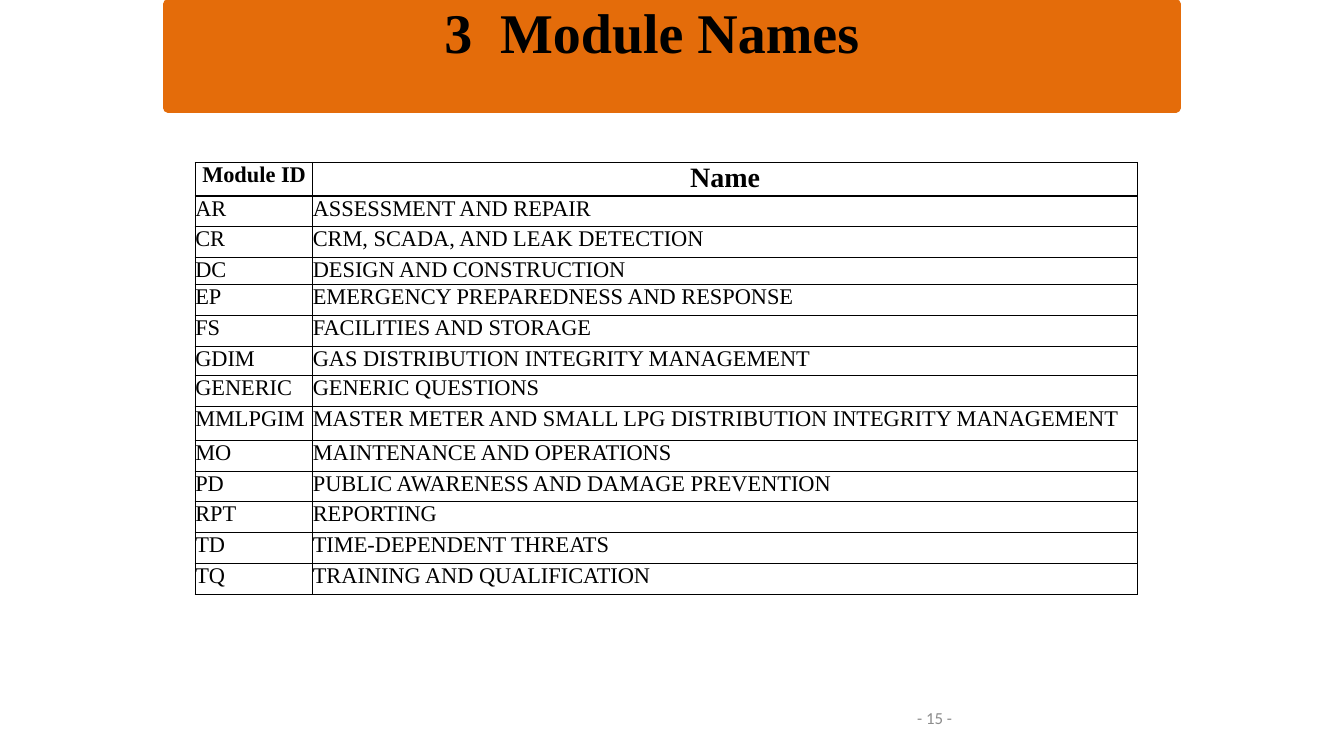
from dataclasses import dataclass

from lxml.etree import SubElement
from pptx import Presentation
from pptx.dml.color import RGBColor
from pptx.enum.shapes import MSO_SHAPE
from pptx.enum.text import MSO_ANCHOR, PP_ALIGN
from pptx.oxml.ns import qn
from pptx.util import Pt


@dataclass(frozen=True)
class Theme:
    orange: str = "E46C0A"
    black: str = "000000"
    grey: str = "8C8C8C"
    serif: str = "Times New Roman"
    sans: str = "Calibri"
    title: int = 40
    heading: int = 20
    body: int = 16
    footer: int = 12
    border: int = 1


MODULES = [
    ("AR", "ASSESSMENT AND REPAIR"),
    ("CR", "CRM, SCADA, AND LEAK DETECTION"),
    ("DC", "DESIGN AND CONSTRUCTION"),
    ("EP", "EMERGENCY PREPAREDNESS AND RESPONSE"),
    ("FS", "FACILITIES AND STORAGE"),
    ("GDIM", "GAS DISTRIBUTION INTEGRITY MANAGEMENT"),
    ("GENERIC", "GENERIC QUESTIONS"),
    ("MMLPGIM", "MASTER METER AND SMALL LPG DISTRIBUTION INTEGRITY MANAGEMENT"),
    ("MO", "MAINTENANCE AND OPERATIONS"),
    ("PD", "PUBLIC AWARENESS AND DAMAGE PREVENTION"),
    ("RPT", "REPORTING"),
    ("TD", "TIME-DEPENDENT THREATS"),
    ("TQ", "TRAINING AND QUALIFICATION"),
]
ROW_HEIGHT = 22
ROW_HEIGHTS = {"Module ID": 23.8, "DC": 18.4, "GDIM": 21, "MMLPGIM": 24.3}


class SlideBuilder:
    """Draws styled elements on the current slide."""

    def __init__(self, s, theme):
        self.s = s
        self.theme = theme

    def style_text(self, tf, text, size, font, color, bold=False, align=PP_ALIGN.LEFT):
        tf.text = text
        p = tf.paragraphs[0]
        p.alignment = align
        for r in p.runs:
            r.font.size = Pt(size)
            r.font.name = font
            r.font.bold = bold
            r.font.color.rgb = RGBColor.from_string(color)

    def banner(self, x, y, w, h, color, line_width):
        sp = self.s.shapes.add_shape(MSO_SHAPE.RECTANGLE, Pt(x), Pt(y), Pt(w), Pt(h))
        sp.shadow.inherit = False
        sp.fill.solid()
        sp.fill.fore_color.rgb = RGBColor.from_string(color)
        sp.line.color.rgb = RGBColor.from_string(color)
        sp.line.width = Pt(line_width)

    def text(self, x, y, w, h, text, size, font, color, anchor=MSO_ANCHOR.TOP,
             top=3.6, right=7.2, **style):
        tf = self.s.shapes.add_textbox(Pt(x), Pt(y), Pt(w), Pt(h)).text_frame
        tf.word_wrap = True
        tf.vertical_anchor = anchor
        tf.margin_top, tf.margin_right = Pt(top), Pt(right)
        self.style_text(tf, text, size, font, color, **style)

    def borders(self, cell):
        tcPr = cell._tc.get_or_add_tcPr()
        for side in ("a:lnL", "a:lnR", "a:lnT", "a:lnB"):
            ln = SubElement(tcPr, qn(side), w=str(Pt(self.theme.border)))
            fill = SubElement(ln, qn("a:solidFill"))
            SubElement(fill, qn("a:srgbClr"), val=self.theme.black)

    def cell(self, cell, text, size, **style):
        cell.margin_left = cell.margin_right = cell.margin_top = cell.margin_bottom = 0
        self.borders(cell)
        cell.fill.background()
        self.style_text(cell.text_frame, text, size, self.theme.serif, self.theme.black, **style)

    def table(self, x, y, widths, headings, rows):
        t = self.theme
        heights = [ROW_HEIGHTS.get(key, ROW_HEIGHT) for key, _ in [headings, *rows]]
        table = self.s.shapes.add_table(
            len(heights), len(widths), Pt(x), Pt(y), Pt(sum(widths)), Pt(sum(heights))).table
        table.first_row = table.horz_banding = False
        for column, width in zip(table.columns, widths):
            column.width = Pt(width)
        for row, height in zip(table.rows, heights):
            row.height = Pt(height)
        for c, (text, size) in enumerate(zip(headings, (t.body, t.heading))):
            self.cell(table.cell(0, c), text, size, bold=True, align=PP_ALIGN.CENTER)
        for i, row in enumerate(rows, start=1):
            for c, text in enumerate(row):
                self.cell(table.cell(i, c), text, t.body)


def main():
    prs = Presentation()
    prs.slide_width, prs.slide_height = Pt(960), Pt(540)
    t = Theme()
    b = SlideBuilder(prs.slides.add_slide(prs.slide_layouts[6]), t)
    b.banner(120, 3, 720, 74, t.orange, 6.75)
    b.text(648, 498, 168, 29, "- 15 -", t.footer, t.sans, t.grey, anchor=MSO_ANCHOR.MIDDLE)
    b.text(111.6, -9.4, 728, 98.6, "3  Module Names", t.title, t.serif, t.black,
           top=8, right=27.2, bold=True, align=PP_ALIGN.CENTER)
    b.table(139.5, 116, (84, 589), ("Module ID", "Name"), MODULES)
    prs.save("out.pptx")


if __name__ == "__main__":
    main()
